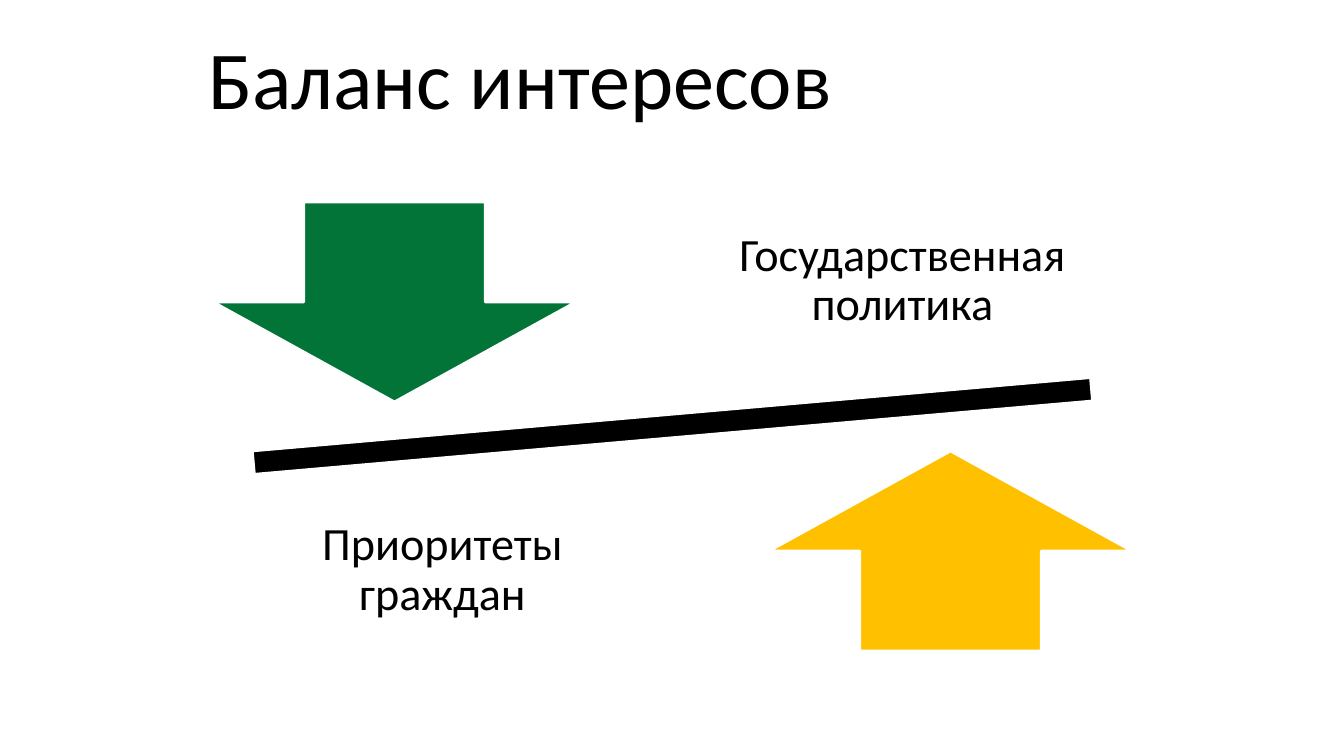
from pptx import Presentation
from pptx import util as u
from pptx.dml.color import RGBColor
from pptx.enum import shapes, text

HUES = {"ink": "000000", "edge": "FFFFFF", "green": "027438", "gold": "FFC000"}
KINDS = shapes.MSO_SHAPE


class Board:
    font = "Calibri"
    scale = 914400 / 100.8

    def __init__(self, deck):
        deck.slide_width, deck.slide_height = self.px(1344, 756)
        self.slide = deck.slides.add_slide(deck.slide_layouts[6])

    def px(self, *sizes):
        return [u.Emu(round(size * self.scale)) for size in sizes]

    def hue(self, name):
        return RGBColor.from_string(HUES[name])

    def shape(self, kind, box, fill, turn=0):
        item = self.slide.shapes.add_shape(kind, *self.px(*box))
        item.shadow.inherit = False
        item.rotation = turn
        item.fill.solid()
        item.fill.fore_color.rgb = self.hue(fill)
        item.line.color.rgb = self.hue("edge")
        item.line.width = u.Pt(2)

    def label(self, words, box, size, pad, space=1.0):
        frame = self.slide.shapes.add_textbox(*self.px(*box)).text_frame
        inset = self.px(pad)[0]
        style = {
            "word_wrap": True,
            "vertical_anchor": text.MSO_ANCHOR.MIDDLE,
            "margin_left": inset,
            "margin_right": inset,
            "margin_top": inset,
            "margin_bottom": inset,
        }
        for key, value in style.items():
            setattr(frame, key, value)
        para = frame.paragraphs[0]
        para.text = words
        para.alignment = text.PP_ALIGN.CENTER
        para.line_spacing = space
        para.font.name = self.font
        para.font.size = u.Pt(size)
        para.font.color.rgb = self.hue("ink")


def main():
    deck = Presentation()
    board = Board(deck)
    board.label("Баланс интересов", (67, 30, 906, 94), 58.7, 5)
    board.shape(KINDS.MATH_MINUS, (100, 376, 1145, 100), "ink", 355)

    sides = [
        (KINDS.DOWN_ARROW, (213, 202), "green", "Государственная политика", (709, 176)),
        (KINDS.UP_ARROW, (769, 451), "gold", "Приоритеты граждан", (249, 466)),
    ]
    for kind, spot, fill, words, place in sides:
        board.shape(kind, (*spot, 363, 200), fill)
        board.label(words, (*place, 387, 210), 33, 26, 0.9)
    deck.save("out.pptx")


if __name__ == "__main__":
    main()
